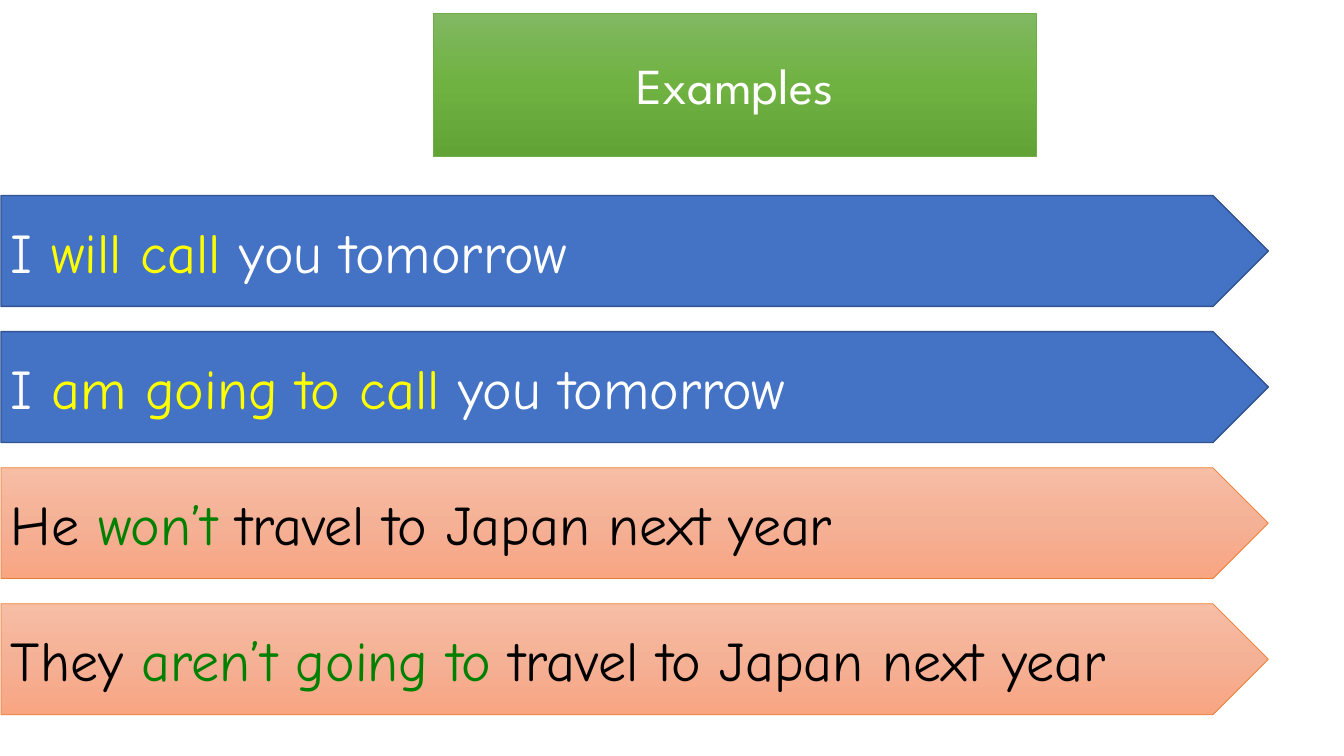
from copy import deepcopy

from lxml import etree
from pptx import Presentation
from pptx.dml.color import RGBColor
from pptx.enum.shapes import MSO_SHAPE as SHAPE
from pptx.enum.text import MSO_ANCHOR as ANCHOR, MSO_AUTO_SIZE as AUTO, PP_ALIGN as ALIGN
from pptx.oxml import parse_xml
from pptx.oxml.ns import nsdecls, qn
from pptx.util import Inches, Pt

THEME = {
    "title": {"font": "League Spartan", "size": 36, "text": "FFFFFF",
              "fill": ["81B861", "6FB242", "62A336"], "line": "70AD47", "width": 0.5},
    "positive": {"font": "Comic Neue", "size": 40, "text": "FFFFFF", "accent": "FFFF00",
                 "fill": ["4472C4"], "line": "325491", "width": 1},
    "negative": {"font": "Comic Neue", "size": 40, "text": "000000", "accent": "008000",
                 "fill": ["F7BDA5", "F5B196", "F8A582"], "line": "ED7D31", "width": 0.5},
}


def paint(sp, look):
    """Fill with one colour or a top-to-bottom gradient, then outline."""
    colors = look["fill"]
    if len(colors) == 1:
        sp.fill.solid()
        sp.fill.fore_color.rgb = RGBColor.from_string(colors[0])
    else:
        sp.fill.gradient()
        sp.fill.gradient_angle = 270
        stop_list = sp._element.spPr.find(qn("a:gradFill")).find(qn("a:gsLst"))
        stop_list.insert(1, deepcopy(stop_list[0]))
        for i, (stop, color) in enumerate(zip(sp.fill.gradient_stops, colors)):
            stop.position = i / 2
            stop.color.rgb = RGBColor.from_string(color)
    sp.line.color.rgb = RGBColor.from_string(look["line"])
    sp.line.width = Pt(look["width"])


def write(sp, look, parts, align):
    """Write the parts as runs; every second one takes the accent colour."""
    tf = sp.text_frame
    frame_format = {"word_wrap": True, "auto_size": AUTO.NONE, "vertical_anchor": ANCHOR.MIDDLE}
    for name, value in frame_format.items():
        setattr(tf, name, value)
    p = tf.paragraphs[0]
    p.alignment = align
    for i, text in enumerate(parts):
        r = p.add_run()
        r.text = text
        for name, value in {"name": look["font"], "size": Pt(look["size"])}.items():
            setattr(r.font, name, value)
        r.font.color.rgb = RGBColor.from_string(look["accent" if i % 2 else "text"])


prs = Presentation()
prs.slide_width, prs.slide_height = Inches(13.33), Inches(7.5)
s = prs.slides.add_slide(prs.slide_layouts[5])

# Title in a speech bubble
title = s.shapes.title
box = {"left": 4.3, "top": 0.13, "width": 5.98, "height": 1.42}
for name, value in box.items():
    setattr(title, name, Inches(value))
bubble = parse_xml(f'<a:prstGeom {nsdecls("a")} prst="wedgeEllipseCallout"/>')
guides = etree.SubElement(bubble, qn("a:avLst"))
for name, value in {"adj1": 38500, "adj2": 74600}.items():
    etree.SubElement(guides, qn("a:gd"), name=name, fmla=f"val {value}")
title._element.spPr.append(bubble)
paint(title, THEME["title"])
write(title, THEME["title"], ["Examples"], ALIGN.CENTER)

# Example sentences, one arrow each
sentences = [
    ("positive", ["I ", "will call ", "you tomorrow"]),
    ("positive", ["I ", "am going to call ", "you tomorrow"]),
    ("negative", ["He ", "won’t", " travel to Japan next year"]),
    ("negative", ["They ", "aren’t going to ", "travel to Japan next year"]),
]
for i, (kind, parts) in enumerate(sentences):
    arrow = s.shapes.add_shape(SHAPE.PENTAGON, Inches(0.01), Inches(1.94 + 1.35 * i),
                               Inches(12.57), Inches(1.1))
    arrow.shadow.inherit = False
    paint(arrow, THEME[kind])
    write(arrow, THEME[kind], parts, ALIGN.LEFT)

prs.save("out.pptx")
